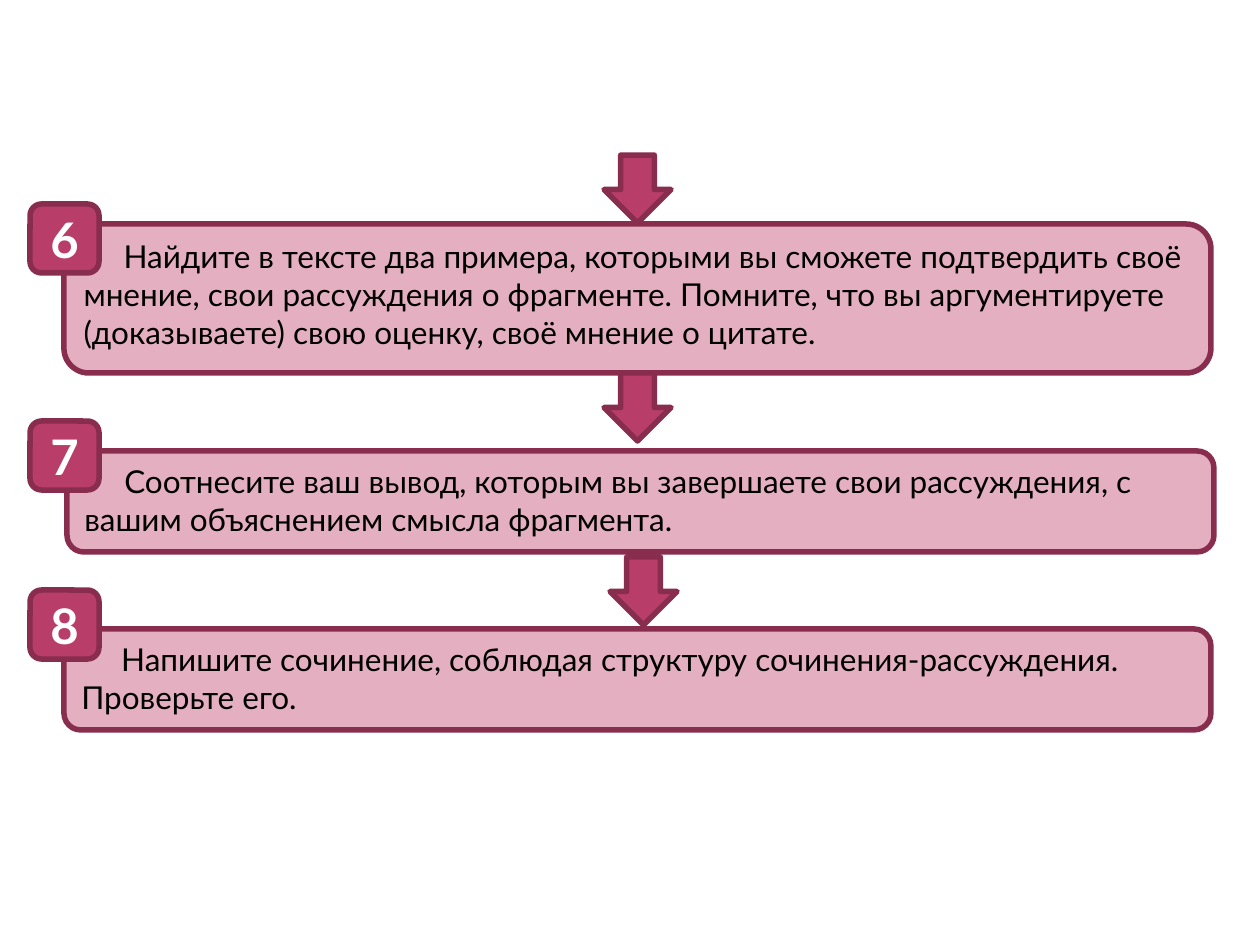
from pptx import Presentation
from pptx.dml.color import RGBColor
from pptx.enum.shapes import MSO_SHAPE as Shape
from pptx.enum.text import MSO_ANCHOR as Anchor, PP_ALIGN as Align
from pptx.util import Pt

SCALE = 914400 / 126


def px(n):
    return round(n * SCALE)


def tint(code):
    return RGBColor.from_string(code)


class Deck:
    """Hold the style and the current slide."""

    font = "Lato"
    dark, mid, pale = "882D4D", "B83D68", "E5AFC2"

    def __init__(self, wide, high):
        self.show = Presentation()
        self.show.slide_width, self.show.slide_height = px(wide), px(high)
        self.slide = self.show.slides.add_slide(self.show.slide_layouts[6])

    def form(self, kind, left, top, wide, high, fill):
        item = self.slide.shapes.add_shape(
            kind, px(left), px(top), px(wide), px(high))
        item.shadow.inherit = False
        item.fill.solid()
        item.fill.fore_color.rgb = tint(fill)
        item.line.color.rgb = tint(self.dark)
        item.line.width = Pt(3.15)
        return item

    def label(self, item, text, size, color, bold, align, anchor):
        frame = item.text_frame
        frame.word_wrap = True
        frame.vertical_anchor = anchor
        para = frame.paragraphs[0]
        para.alignment = align
        run = para.add_run()
        run.text = text
        run.font.name = self.font
        run.font.size = Pt(size)
        run.font.bold = bold
        run.font.color.rgb = tint(color)
        return para

    def panel(self, left, top, high, text):
        item = self.form(Shape.ROUNDED_RECTANGLE, left, top, 1147, high, self.pale)
        para = self.label(item, text, 18, "000000", False, Align.LEFT, Anchor.TOP)
        para._p.get_or_add_pPr().set("indent", str(px(40)))

    def badge(self, top, text):
        item = self.form(Shape.ROUNDED_RECTANGLE, 30, top, 69, 69, self.mid)
        self.label(item, text, 28, "FFFFFF", True, Align.CENTER, Anchor.MIDDLE)

    def arrow(self, left, top):
        self.form(Shape.DOWN_ARROW, left, top, 67, 68, self.mid)


STEPS = [
    ("6", 64, 224, 149, 204, (604, 155),
     "Найдите в тексте два примера, которыми вы сможете подтвердить своё "
     "мнение, свои рассуждения о фрагменте. Помните, что вы аргументируете "
     "(доказываете) свою оценку, своё мнение о цитате."),
    ("7", 67, 451, 101, 421, (604, 373),
     "Соотнесите ваш вывод, которым вы завершаете свои рассуждения, с "
     "вашим объяснением смысла фрагмента."),
    ("8", 64, 629, 101, 590, (610, 557),
     "Напишите сочинение, соблюдая структуру сочинения-рассуждения. "
     "Проверьте его."),
]


def main():
    deck = Deck(1260, 945)
    for mark, left, top, high, peak, tip, text in STEPS:
        deck.panel(left, top, high, text)
        deck.badge(peak, mark)
        deck.arrow(*tip)
    deck.show.save("out.pptx")


if __name__ == "__main__":
    main()
